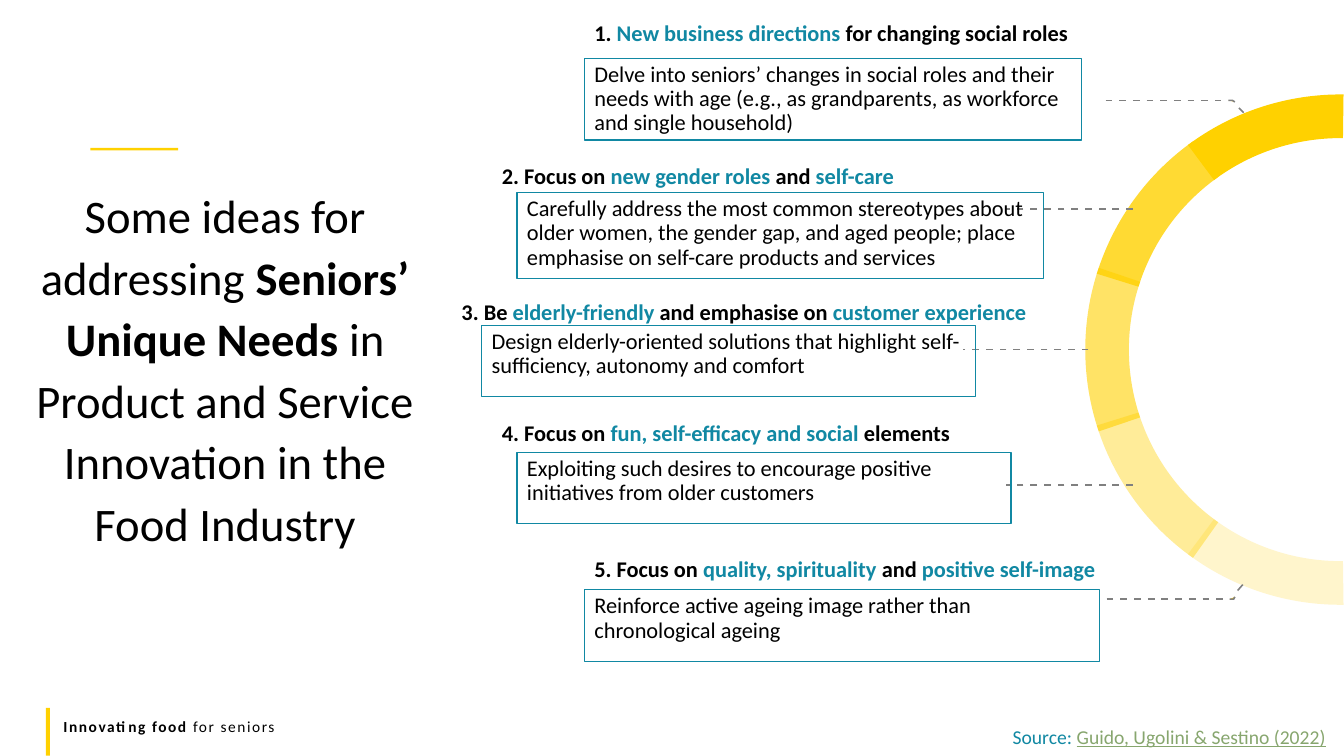
from math import ceil, cos, radians, sin, tan

from lxml import etree
from pptx import Presentation
from pptx.dml.color import RGBColor
from pptx.enum.shapes import MSO_CONNECTOR, MSO_SHAPE
from pptx.enum.text import MSO_ANCHOR, PP_ALIGN
from pptx.oxml.ns import qn
from pptx.util import Cm, Pt

STRAIGHT, RECTANGLE = MSO_CONNECTOR.STRAIGHT, MSO_SHAPE.RECTANGLE
TOP, LEFT, CENTER = MSO_ANCHOR.TOP, PP_ALIGN.LEFT, PP_ALIGN.CENTER

COLORS = {"yellow": "FFD100", "teal": "1188A3", "green": "87A66E",
          "black": "000000", "grey": "808080"}

# Content: runs are (text, format), lengths are in cm
PLAIN, BOLD, TEAL = {}, {"bold": True}, {"bold": True, "color": "teal"}

TITLE = [("Some ideas for addressing ", PLAIN), ("Seniors’ Unique Needs ", BOLD),
         ("in Product and Service Innovation in the Food Industry", PLAIN)]
FOOTER = [("Innovating food ", BOLD), ("for seniors", PLAIN)]
SOURCE = [("Source: ", {"color": "teal"}),
          ("Guido, Ugolini & Sestino (2022)", {"color": "green", "underline": True})]

IDEAS = [
    {"heading": [("1. ", BOLD), ("New business directions ", TEAL),
                 ("for changing social roles", BOLD)],
     "detail": "Delve into seniors’ changes in social roles and their needs with age "
               "(e.g., as grandparents, as workforce and single household)",
     "heading_at": (14.73, 0.43, 13.79, 1.02), "detail_at": (14.73, 1.47, 12.52, 2.06),
     "leader": (27.86, 30.78, 2.53),
     "corner": [(30.96, 2.53), (31.06, 2.53), (31.12, 2.57)],
     "tip": (31.22, 2.72, 31.34, 2.84)},
    {"heading": [("2. Focus on ", BOLD), ("new gender roles ", TEAL),
                 ("and ", BOLD), ("self-care", TEAL)],
     "detail": "Carefully address the most common stereotypes about older women, the gender "
               "gap, and aged people; place emphasise on self-care products and services",
     "heading_at": (12.4, 4.04, 12.19, 1.22), "detail_at": (13.03, 4.85, 13.28, 2.16),
     "leader": (28.55, 25.35, 5.26)},
    {"heading": [("3. Be ", BOLD), ("elderly-friendly", TEAL),
                 (" and emphasise on ", BOLD), ("customer experience", TEAL)],
     "detail": "Design elderly-oriented solutions that highlight self-sufficiency, "
               "autonomy and comfort",
     "heading_at": (11.38, 7.47, 15.01, 1.22), "detail_at": (12.14, 8.2, 12.45, 1.8),
     "leader": (27.43, 24.26, 8.81)},
    {"heading": [("4. Focus on ", BOLD), ("fun, self-efficacy and social ", TEAL),
                 ("elements", BOLD)],
     "detail": "Exploiting such desires to encourage positive initiatives from older customers",
     "heading_at": (12.4, 10.52, 12.09, 0.74), "detail_at": (13.03, 11.4, 12.45, 1.8),
     "leader": (28.55, 25.35, 12.22)},
    {"heading": [("5. Focus on ", BOLD), ("quality, spirituality", TEAL),
                 (" and ", BOLD), ("positive self-image", TEAL)],
     "detail": "Reinforce active ageing image rather than chronological ageing",
     "heading_at": (14.73, 13.94, 13.94, 0.74), "detail_at": (14.73, 14.86, 12.98, 1.8),
     "leader": (27.89, 30.83, 15.1),
     "corner": [(30.99, 15.1), (31.09, 15.1), (31.12, 15.04)],
     "tip": (31.19, 14.88, 31.32, 14.73)},
]

RING = {"x": 33.78, "y": 8.81, "outer": 6.43, "inner": 5.33}
SEGMENT_STEP, SEGMENT_HALF = 36, 18.7  # degrees; neighbours overlap a little
DASH, DASH_STEP = 0.17, 0.345
ACCENT_BARS = [(2.28, 3.73, 2.21, 0.06), (1.16, 17.84, 0.1, 1.2)]


def rgb(name):
    return RGBColor.from_string(COLORS[name])


def apply(target, values):
    for key, value in values.items():
        setattr(target, key, value)


def outline(shape, color, width):
    shape.line.color.rgb = rgb(color)
    shape.line.width = Pt(width)


def write(shape, runs, size, spacing=1.0, align=LEFT, tracking=0):
    frame = shape.text_frame
    apply(frame, {"word_wrap": True, "vertical_anchor": TOP})
    paragraph = frame.paragraphs[0]
    apply(paragraph, {"alignment": align, "line_spacing": spacing})
    for text, style in runs:
        run = paragraph.add_run()
        run.text = text
        apply(run.font, {"name": "Calibri", "size": Pt(size),
                         "bold": style.get("bold", False),
                         "underline": style.get("underline", False)})
        run.font.color.rgb = rgb(style.get("color", "black"))
        if tracking:
            run.font._element.set("spc", str(tracking))


def text_box(slide, at, *args, **kwargs):
    write(slide.shapes.add_textbox(*map(Cm, at)), *args, **kwargs)


def rectangle(slide, at):
    shape = slide.shapes.add_shape(RECTANGLE, *map(Cm, at))
    shape.shadow.inherit = False
    return shape


def freeform(slide, points, close):
    corners = [(Cm(x), Cm(y)) for x, y in points]
    builder = slide.shapes.build_freeform(*corners[0], scale=1.0)
    builder.add_line_segments(corners[1:], close=close)
    shape = builder.convert_to_shape()
    shape.shadow.inherit = False
    return shape


def fill_yellow(shape, opacity=100):
    shape.fill.solid()
    shape.fill.fore_color.rgb = rgb("yellow")
    shape.line.fill.background()
    if opacity < 100:
        color = shape._element.spPr.find(qn("a:solidFill"))[0]
        etree.SubElement(color, qn("a:alpha"), val=str(opacity * 1000))


def arc(radius, start, end):
    """Start point, then control, control, end for each half of the arc."""
    half = (end - start) / 2
    pull = 4 / 3 * tan(radians(half) / 4)

    def at(degrees, tangent=0):
        c, s = cos(radians(degrees)), sin(radians(degrees))
        return (RING["x"] - radius * (c - tangent * s),
                RING["y"] - radius * (s + tangent * c))

    points = [at(start)]
    for a in (start, start + half):
        points += [at(a, pull), at(a + half, -pull), at(a + half)]
    return points


def ring_segment(slide, index):
    """Segment 0 is at the top; each next one is lower and paler."""
    middle = (2 - index) * SEGMENT_STEP
    low, high = middle - SEGMENT_HALF, middle + SEGMENT_HALF
    points = arc(RING["outer"], low, high) + arc(RING["inner"], high, low)
    segment = freeform(slide, points, True)
    # Join each control, control, end group into one curve
    sides = list(segment._element.iter(qn("a:lnTo")))
    for first in (0, 3, 7, 10):
        curve = etree.Element(qn("a:cubicBezTo"))
        sides[first].addprevious(curve)
        for side in sides[first:first + 3]:
            curve.append(side[0])
            side.getparent().remove(side)
    fill_yellow(segment, 100 - 20 * index)


def dash_line(slide, *ends):
    dash = slide.shapes.add_connector(STRAIGHT, *map(Cm, ends))
    outline(dash, "grey", 1.13)
    etree.SubElement(dash._element.spPr, qn("a:effectLst"))


def leader_line(slide, idea):
    start, end, y = idea["leader"]
    length, sign = abs(end - start), 1 if end > start else -1
    for number in range(ceil(length / DASH_STEP)):
        near = number * DASH_STEP
        far = min(near + DASH, length)
        dash_line(slide, start + sign * near, y, start + sign * far, y)
    if "corner" in idea:
        corner = freeform(slide, idea["corner"], False)
        fill_yellow(corner)
        outline(corner, "grey", 1.13)
        dash_line(slide, *idea["tip"])


def main():
    prs = Presentation()
    apply(prs, {"slide_width": Cm(33.87), "slide_height": Cm(19.05)})
    slide = prs.slides.add_slide(prs.slide_layouts[6])

    # Ring and leader lines
    for index in range(len(IDEAS)):
        ring_segment(slide, index)
    for idea in IDEAS:
        leader_line(slide, idea)

    # Accent bars, footer and title
    for at in ACCENT_BARS:
        fill_yellow(rectangle(slide, at))
    text_box(slide, (1.35, 17.94, 30.48, 0.74), FOOTER, 11, tracking=110)
    text_box(slide, (0.66, 4.45, 10.03, 9.73), TITLE, 33.3, 1.1, CENTER)

    # Ideas
    for idea in IDEAS:
        detail = rectangle(slide, idea["detail_at"])
        detail.fill.background()
        outline(detail, "teal", 0.75)
        write(detail, [(idea["detail"], PLAIN)], 16, 0.9)
        text_box(slide, idea["heading_at"], idea["heading"], 16, 0.9)

    # Source
    text_box(slide, (25.27, 18.14, 8.6, 0.86), SOURCE, 14)

    prs.save("out.pptx")


if __name__ == "__main__":
    main()
